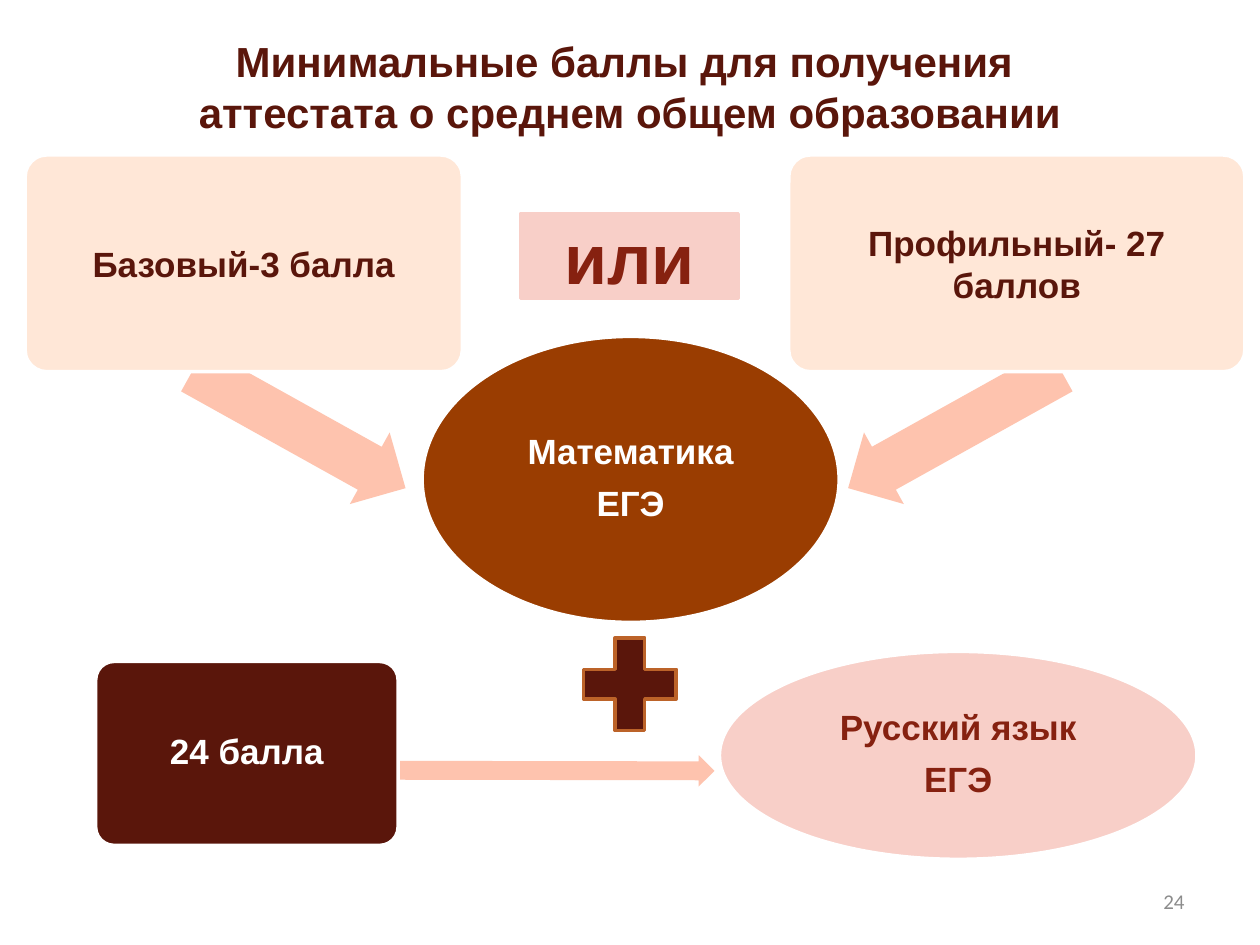
import pptx
import pptx.dml.color
import pptx.enum.shapes
import pptx.enum.text
import pptx.util
from lxml import etree
from pptx.oxml.ns import qn

Inches, Pt = pptx.util.Inches, pptx.util.Pt
SHAPE = pptx.enum.shapes.MSO_SHAPE
ALIGN = pptx.enum.text.PP_ALIGN
MIDDLE = pptx.enum.text.MSO_ANCHOR.MIDDLE

THEME = {
    "font": "Arial", "number_font": "Calibri",
    "title": 24, "label": 20, "or": 40, "number": 12,
    "white": "FFFFFF", "dark": "5A160B", "red": "862110", "brown": "9A3D01",
    "cream": "FFE7D7", "pink": "F8CFC8", "arrow": "FEC3AE",
    "plus_line": "BC6329", "grey": "8C8C8C",
}

TITLE = "Минимальные баллы для получения \vаттестата о среднем общем образовании"

# left, top, width, height, rotation
ARROWS = [
    (1.41, 3.08, 1.93, 0.65, 209.1),
    (6.61, 3.08, 1.93, 0.65, 330.9),
    (2.13, 5.99, 3.54, 0.25, 180.1),
]

# preset, box, fill, line, text colour, size, inset, line spacing, paragraphs
NODES = [
    (SHAPE.OVAL, (3.35, 2.67, 3.31, 2.27), "brown", "white", "white", "label", 0.01, 0.9,
     ["Математика", "ЕГЭ"]),
    (SHAPE.ROUNDED_RECTANGLE, (0.2, 1.23, 3.47, 1.72), "cream", "white", "dark", "label",
     0.04, 1.0, ["Базовый-3 балла"]),
    (SHAPE.ROUNDED_RECTANGLE, (6.26, 1.23, 3.62, 1.72), "cream", "white", "dark", "label",
     0.04, 1.0, ["Профильный- 27 баллов"]),
    (SHAPE.OVAL, (5.71, 5.17, 3.79, 1.65), "pink", "white", "red", "label", 0.01, 0.9,
     ["Русский язык", "ЕГЭ"]),
    (SHAPE.ROUNDED_RECTANGLE, (0.76, 5.25, 2.4, 1.46), "dark", "white", "white", "label",
     0.04, 0.9, ["24 балла"]),
    (SHAPE.FLOWCHART_PROCESS, (4.13, 1.7, 1.73, 0.67), "pink", "pink", "red", "or",
     0.05, 1.0, ["или"]),
    (SHAPE.MATH_PLUS, (4.5, 4.93, 1, 1), "dark", "plus_line", "white", "label",
     0.05, 1.0, []),
]


def color(name):
    return pptx.dml.color.RGBColor.from_string(THEME[name])


def style(p, size, ink, font="font", bold=True, align=ALIGN.CENTER):
    p.alignment = align
    p.font.name = THEME[font]
    p.font.size = Pt(THEME[size])
    p.font.bold = bold
    p.font.color.rgb = color(ink)


def add_filled(s, preset, box, fill, line=None):
    sp = s.shapes.add_shape(preset, *map(Inches, box))
    sp.shadow.inherit = False
    sp.fill.solid()
    sp.fill.fore_color.rgb = color(fill)
    if line:
        sp.line.color.rgb = color(line)
        sp.line.width = Pt(2)
    else:
        sp.line.fill.background()
    return sp


def add_node(s, preset, box, fill, line, ink, size, inset, spacing, lines):
    sp = add_filled(s, preset, box, fill, line)
    if preset == SHAPE.ROUNDED_RECTANGLE:
        sp.adjustments[0] = 0.1
    tf = sp.text_frame
    tf.word_wrap = True
    tf.vertical_anchor = MIDDLE
    tf.margin_left = tf.margin_right = tf.margin_top = tf.margin_bottom = Inches(inset)
    for i, text in enumerate(lines):
        p = tf.add_paragraph() if i else tf.paragraphs[0]
        p.text = text
        p.line_spacing = spacing
        if i < len(lines) - 1:
            p.space_after = Pt(8)
        style(p, size, ink)


def add_arrow(s, *place):
    sp = add_filled(s, SHAPE.LEFT_ARROW, place[:4], "arrow")
    sp.adjustments[0] = 0.6
    sp.rotation = place[4]


def add_title(s):
    title = s.shapes.title
    title.left, title.top, title.width, title.height = map(Inches, (0.5, 0.3, 9, 0.77))
    tf = title.text_frame
    tf.text = TITLE
    tf.vertical_anchor = MIDDLE
    style(tf.paragraphs[0], "title", "dark")


def add_slide_number(s, number):
    tf = s.shapes.add_textbox(*map(Inches, (7.17, 6.95, 2.33, 0.4))).text_frame
    tf.word_wrap = True
    tf.vertical_anchor = MIDDLE
    p = tf.paragraphs[0]
    p.text = number
    style(p, "number", "grey", "number_font", False, ALIGN.RIGHT)


def main():
    prs = pptx.Presentation()
    prs.slide_width, prs.slide_height = Inches(10), Inches(7.5)
    s = prs.slides.add_slide(prs.slide_layouts[5])
    add_title(s)
    for arrow in ARROWS:
        add_arrow(s, *arrow)
    for node in NODES:
        add_node(s, *node)
    add_slide_number(s, "24")
    prs.save("out.pptx")


if __name__ == "__main__":
    main()
